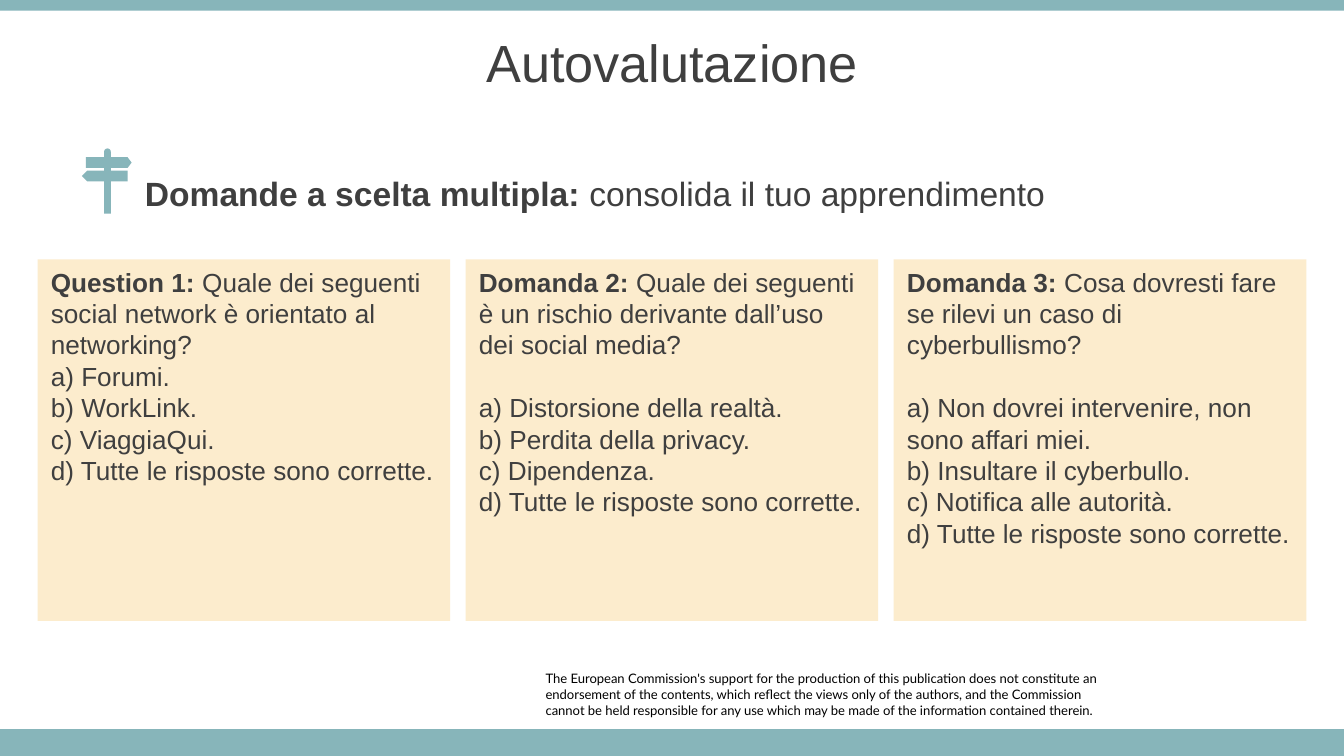
from math import cos, pi, sin

from pptx import Presentation
from pptx.dml.color import RGBColor
from pptx.enum.shapes import MSO_SHAPE
from pptx.enum.text import MSO_ANCHOR, PP_ALIGN
from pptx.util import Inches, Pt

WIDTH = 10
HEIGHT = WIDTH * 9 / 16
TEAL, CREAM, GREY, BLACK = "87B5BA", "FCECCD", "3F3F3F", "000000"
MARGIN, CARD_WIDTH = 0.28, 3.07
CARD_TOP, CARD_HEIGHT = 1.93, 2.69
OPTION_GAP = 16.8

ALL_CORRECT = "d) Tutte le risposte sono corrette."
QUESTIONS = [
    ("Question 1: ",
     "Quale dei seguenti social network è orientato al networking?",
     ["a) Forumi.", "b) WorkLink.", "c) ViaggiaQui.", ALL_CORRECT], 0),
    ("Domanda 2: ",
     "Quale dei seguenti è un rischio derivante dall’uso dei social media?",
     ["a) Distorsione della realtà.", "b) Perdita della privacy.",
      "c) Dipendenza.", ALL_CORRECT], OPTION_GAP),
    ("Domanda 3: ",
     "Cosa dovresti fare se rilevi un caso di cyberbullismo?",
     ["a) Non dovrei intervenire, non sono affari miei.",
      "b) Insultare il cyberbullo.", "c) Notifica alle autorità.",
      ALL_CORRECT], OPTION_GAP),
]
DISCLAIMER = [
    "The European Commission's support for the production of this publication "
    "does not constitute an endorsement of the contents, which reflect the "
    "views only of the authors, and the Commission",
    "cannot be held responsible for any use which may be made of the "
    "information contained therein.",
]


def paint(target, color):
    target.fill.solid()
    target.fill.fore_color.rgb = RGBColor.from_string(color)
    target.line.fill.background()
    target.shadow.inherit = False


def add_block(slide, left, top, width, height, color):
    block = slide.shapes.add_shape(
        MSO_SHAPE.RECTANGLE, *map(Inches, (left, top, width, height)))
    paint(block, color)
    return block


def write(frame, paragraphs, size, color=GREY, font="Arial",
          align=PP_ALIGN.LEFT, anchor=MSO_ANCHOR.TOP):
    frame.word_wrap = True
    frame.vertical_anchor = anchor
    for index, (lead, body) in enumerate(paragraphs):
        paragraph = frame.paragraphs[0] if index == 0 else frame.add_paragraph()
        paragraph.alignment = align
        paragraph.font.size = Pt(size)
        paragraph.font.name = font
        paragraph.font.color.rgb = RGBColor.from_string(color)
        if lead:
            run = paragraph.add_run()
            run.text = lead
            run.font.bold = True
        paragraph.add_run().text = body


def add_label(slide, left, top, width, height, paragraphs, size, **style):
    label = slide.shapes.add_textbox(*map(Inches, (left, top, width, height)))
    write(label.text_frame, paragraphs, size, **style)
    return label.text_frame


def add_card(slide, left, lead, question, options, gap):
    card = add_block(slide, left, CARD_TOP, CARD_WIDTH, CARD_HEIGHT, CREAM)
    frame = card.text_frame
    write(frame, [(lead, question)] + [("", option) for option in options], 14)
    if gap:
        frame.paragraphs[1].space_before = Pt(gap)


def add_signpost(slide):
    middle, radius = 0.8, 0.025
    pole_left, pole_right = middle - radius, middle + radius
    cap = [(middle - radius * cos(pi * step / 8),
            1.13 - radius * sin(pi * step / 8)) for step in range(9)]
    right_arm = [(pole_right, 1.17), (0.95, 1.17), (0.98, 1.21),
                 (0.95, 1.25), (pole_right, 1.25)]
    lower_arm = [(pole_right, 1.27), (0.95, 1.27), (0.95, 1.35),
                 (pole_right, 1.35)]
    foot = [(pole_right, 1.59), (pole_left, 1.59)]
    left_arm = [(pole_left, 1.35), (0.65, 1.35), (0.61, 1.31),
                (0.65, 1.27), (pole_left, 1.27)]
    upper_arm = [(pole_left, 1.25), (0.64, 1.25), (0.64, 1.17),
                 (pole_left, 1.17)]
    outline = [(Inches(x), Inches(y)) for x, y in
               cap + right_arm + lower_arm + foot + left_arm + upper_arm]
    builder = slide.shapes.build_freeform(*outline[0])
    builder.add_line_segments(outline[1:], close=True)
    paint(builder.convert_to_shape(), TEAL)


def main():
    deck = Presentation()
    deck.slide_width, deck.slide_height = Inches(WIDTH), Inches(HEIGHT)
    slide = deck.slides.add_slide(deck.slide_layouts[6])

    disclaimer = add_label(slide, 4.06, 4.99, 4.17, 0.35,
                           [("", line) for line in DISCLAIMER], 7,
                           color=BLACK, font="Lato")
    disclaimer.margin_left = disclaimer.margin_right = 0
    disclaimer.margin_top = disclaimer.margin_bottom = 0

    add_block(slide, 0, HEIGHT - 0.2, WIDTH, 0.2, TEAL)
    add_block(slide, 0, 0, WIDTH, 0.08, TEAL)

    add_label(slide, 0, 0.14, WIDTH, 0.63, [("", "Autovalutazione")], 28,
              align=PP_ALIGN.CENTER, anchor=MSO_ANCHOR.MIDDLE)
    add_label(slide, 0.98, 1.28, 7.68, 0.31,
              [("Domande a scelta multipla: ",
                "consolida il tuo apprendimento")], 18,
              anchor=MSO_ANCHOR.MIDDLE)
    add_signpost(slide)

    pitch = (WIDTH - 2 * MARGIN - CARD_WIDTH) / (len(QUESTIONS) - 1)
    for column, question in enumerate(QUESTIONS):
        add_card(slide, MARGIN + column * pitch, *question)

    deck.save("out.pptx")


if __name__ == "__main__":
    main()
